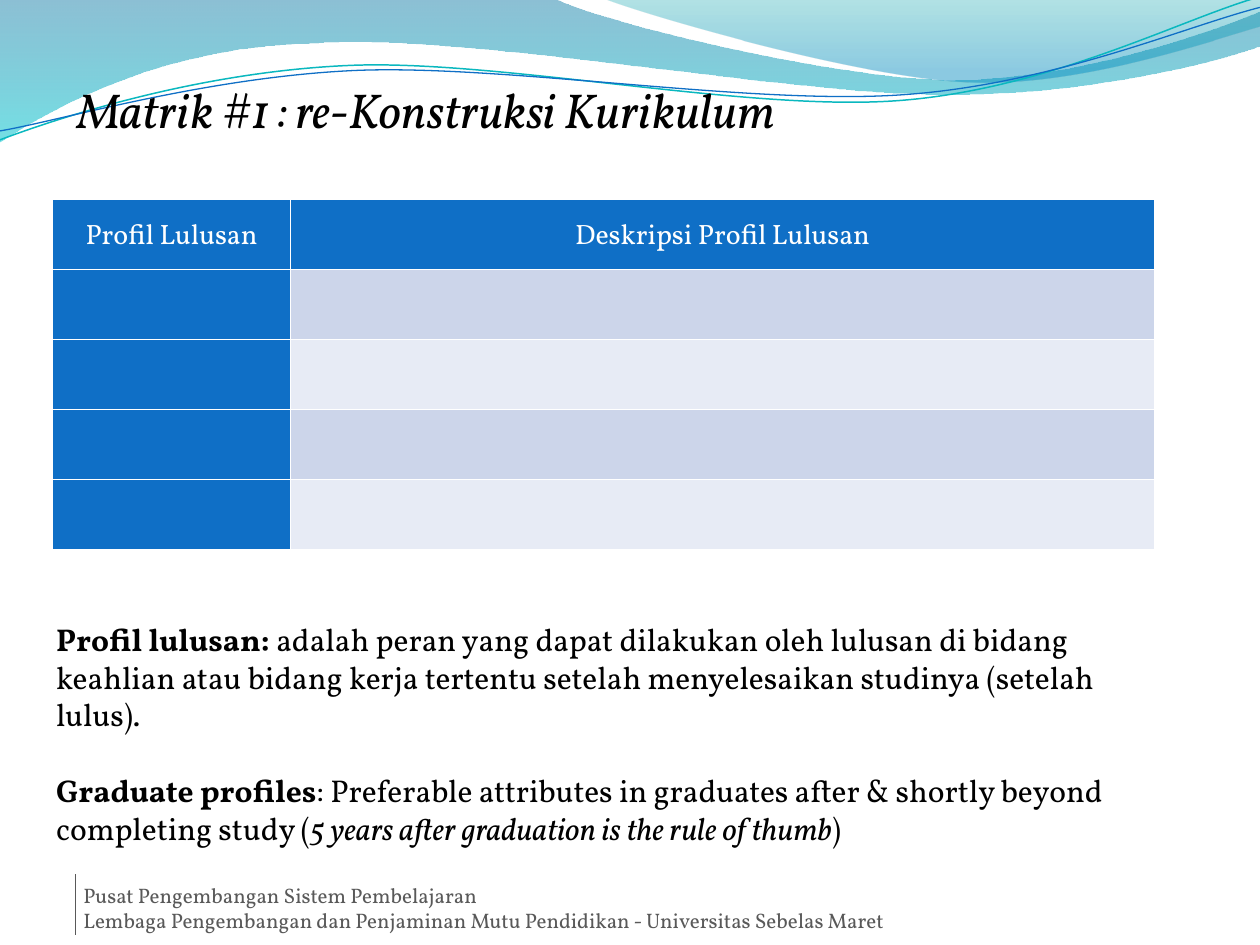
from lxml import etree
from pptx import Presentation
from pptx.dml.color import RGBColor
from pptx.enum import shapes, text
from pptx.oxml.ns import qn
from pptx.util import Cm, Pt

FONT = "Vollkorn"
BLUE, WHITE, BLACK, GREY = "0F6FC6", "FFFFFF", "000000", "595959"
BANDS = ("CCD5EA", "E7EBF5")

# Outlines in cm: a start point, then segments of one point (line)
# or three points (cubic curve).
LEFT_WAVE = [
    (0, 0),
    [(11.18, -0.03)],
    [(12.09, 0.43), (16.87, 1.6), (19.25, 1.6)],
    [(21.67, 1.6), (24.33, 0.66), (25.4, 0.23)],
    [(25.43, 0.91)],
    [(24.97, 1.12), (22.1, 1.93), (18.95, 1.9)],
    [(15.8, 1.9), (9.7, 0.71), (6.53, 0.86)],
    [(3.28, 0.91), (1.17, 2.11), (-0.03, 2.87)],
    [(0, 0)],
]
RIGHT_WAVE = [
    (12.17, -0.03),
    [(12.93, 0.28), (17.32, 1.57), (19.53, 1.65)],
    [(21.74, 1.75), (24.41, 0.81), (25.4, 0.53)],
    [(25.4, 0)],
    [(12.17, -0.03)],
]
TEAL_LINE = [
    (0, 2.82),
    [(1.22, 2.36), (4.01, 1.45), (7.04, 1.32)],
    [(10.03, 1.19), (15.06, 2.26), (18.11, 2.03)],
    [(21.16, 1.8), (23.83, 0.38), (25.35, -0.05)],
]
BLUE_LINE = [
    (0, 2.64),
    [(1.19, 2.44), (4.17, 1.55), (7.19, 1.42)],
    [(10.21, 1.3), (15.16, 2.13), (18.21, 1.91)],
    [(21.23, 1.7), (23.9, 0.53), (25.4, 0.15)],
]


def rgb(value):
    return RGBColor.from_string(value)


def set_font(font, size, color):
    font.name, font.size = FONT, Pt(size)
    font.color.rgb = rgb(color)


def add_outline(slide, outline, close):
    """Build a polygon through all points, then turn each triple into a curve."""
    start, *segments = outline
    builder = slide.shapes.build_freeform(*map(Cm, start))
    builder.add_line_segments(
        [(Cm(x), Cm(y)) for segment in segments for x, y in segment], close=close)
    shape = builder.convert_to_shape()
    shape.shadow.inherit = False
    steps = iter(shape._element.findall(f".//{qn('a:lnTo')}"))
    for segment in segments:
        parts = [next(steps) for _ in segment]
        if len(parts) == 3:
            curve = etree.Element(qn("a:cubicBezTo"))
            parts[0].addprevious(curve)
            for part in parts:
                curve.append(part[0])
                part.getparent().remove(part)
    return shape


def add_wave(slide, outline, stops):
    """Each stop is its position, colour and opacity in percent."""
    wave = add_outline(slide, outline, close=True)
    wave.line.fill.background()
    wave.fill.gradient()
    wave.fill.gradient_angle = 270
    for stop, (position, color, opacity) in zip(wave.fill.gradient_stops, stops):
        stop.position = position
        stop.color.rgb = rgb(color)
        srgb = stop.color._xFill.find(qn("a:srgbClr"))
        etree.SubElement(srgb, qn("a:alpha"), val=str(opacity * 1000))


def add_wave_line(slide, outline, color, width):
    line = add_outline(slide, outline, close=False)
    line.fill.background()
    line.line.color.rgb = rgb(color)
    line.line.width = Pt(width)


def add_text(slide, left, top, width, height, paragraphs, size, color, gap=0):
    """Each paragraph is a list of (text, bold, italic) runs."""
    box = slide.shapes.add_textbox(Cm(left), Cm(top), Cm(width), Cm(height))
    frame = box.text_frame
    frame.word_wrap = True
    for index, runs in enumerate(paragraphs):
        paragraph = frame.add_paragraph() if index else frame.paragraphs[0]
        set_font(paragraph.font, size, color)
        if index and gap:
            paragraph.space_before = Pt(gap)
        for words, bold, italic in runs:
            run = paragraph.add_run()
            run.text = words
            if bold:
                run.font.bold = True
            if italic:
                run.font.italic = True
    return frame


def add_footer(slide):
    lines = (
        "Pusat Pengembangan Sistem Pembelajaran",
        "Lembaga Pengembangan dan Penjaminan Mutu Pendidikan - Universitas Sebelas Maret",
    )
    frame = add_text(slide, 1.68, 17.66, 21.82, 1.27,
                     [[(line, False, False)] for line in lines], 12, GREY)
    frame.margin_left, frame.margin_right = 0, Cm(0.05)
    rule = slide.shapes.add_connector(
        shapes.MSO_CONNECTOR.STRAIGHT, Cm(1.52), Cm(17.62), Cm(1.52), Cm(18.84))
    rule.line.color.rgb = rgb(GREY)
    rule.line.width = Pt(1)
    etree.SubElement(rule._element.spPr, qn("a:effectLst"))


def format_title(slide, words):
    title = slide.shapes.title
    title.left, title.top, title.width, title.height = Cm(1.3), Cm(1.47), Cm(22.86), Cm(2.34)
    frame = title.text_frame
    frame.text = words
    frame.auto_size = text.MSO_AUTO_SIZE.NONE
    frame.vertical_anchor = text.MSO_ANCHOR.TOP
    paragraph = frame.paragraphs[0]
    paragraph.alignment = text.PP_ALIGN.LEFT
    set_font(paragraph.font, 28, BLACK)
    paragraph.font.italic = True
    slide.shapes._spTree.append(title._element)  # in front of the waves


def add_profile_table(slide, headings, widths, body_rows, height):
    rows = body_rows + 1
    table = slide.shapes.add_table(
        rows, len(headings), Cm(1.06), Cm(4.02), Cm(sum(widths)), Cm(height)).table
    table.first_col = True
    for column, width in zip(table.columns, widths):
        column.width = Cm(width)
    for index, row in enumerate(table.rows):
        band = BANDS[(index - 1) % 2] if index else BLUE
        for cell, color in zip(row.cells, (BLUE, band)):
            cell.fill.solid()
            cell.fill.fore_color.rgb = rgb(color)
    for cell, heading in zip(table.rows[0].cells, headings):
        cell.text = heading
        cell.vertical_anchor = text.MSO_ANCHOR.MIDDLE
        cell.margin_left = cell.margin_right = Cm(0.18)
        cell.margin_top = cell.margin_bottom = 0
        paragraph = cell.text_frame.paragraphs[0]
        paragraph.alignment = text.PP_ALIGN.CENTER
        paragraph.line_spacing = 1.15
        set_font(paragraph.font, 16, WHITE)
        paragraph.font.bold = False


def main():
    deck = Presentation()
    deck.slide_width, deck.slide_height = Cm(25.4), Cm(19.05)
    slide = deck.slides.add_slide(deck.slide_layouts.get_by_name("Title Only"))

    add_wave(slide, LEFT_WAVE, [(0, "0074A1", 45), (1, "00C6CF", 55)])
    add_wave(slide, RIGHT_WAVE, [(0, "00A1A9", 30), (0.8, "008BBF", 45)])
    add_wave_line(slide, TEAL_LINE, "0AB8BF", 0.85)
    add_wave_line(slide, BLUE_LINE, BLUE, 0.75)
    add_footer(slide)
    format_title(slide, "Matrik #1 : re-Konstruksi Kurikulum")
    add_profile_table(slide, ("Profil Lulusan", "Deskripsi Profil Lulusan"),
                      (4.8, 17.42), body_rows=4, height=7.06)
    definitions = [
        [("Profil lulusan: ", True, False),
         ("adalah peran yang dapat dilakukan oleh lulusan di bidang keahlian atau "
          "bidang kerja tertentu setelah menyelesaikan studinya (setelah lulus).",
          False, False)],
        [("Graduate profiles", True, False),
         (": Preferable attributes in graduates after & shortly beyond "
          "completing study (", False, False),
         ("5 years after graduation is the rule of thumb", False, True),
         (")", False, False)],
    ]
    add_text(slide, 0.88, 12.37, 22.61, 4.88, definitions, 18, BLACK, gap=21.6)
    deck.save("out.pptx")


if __name__ == "__main__":
    main()
